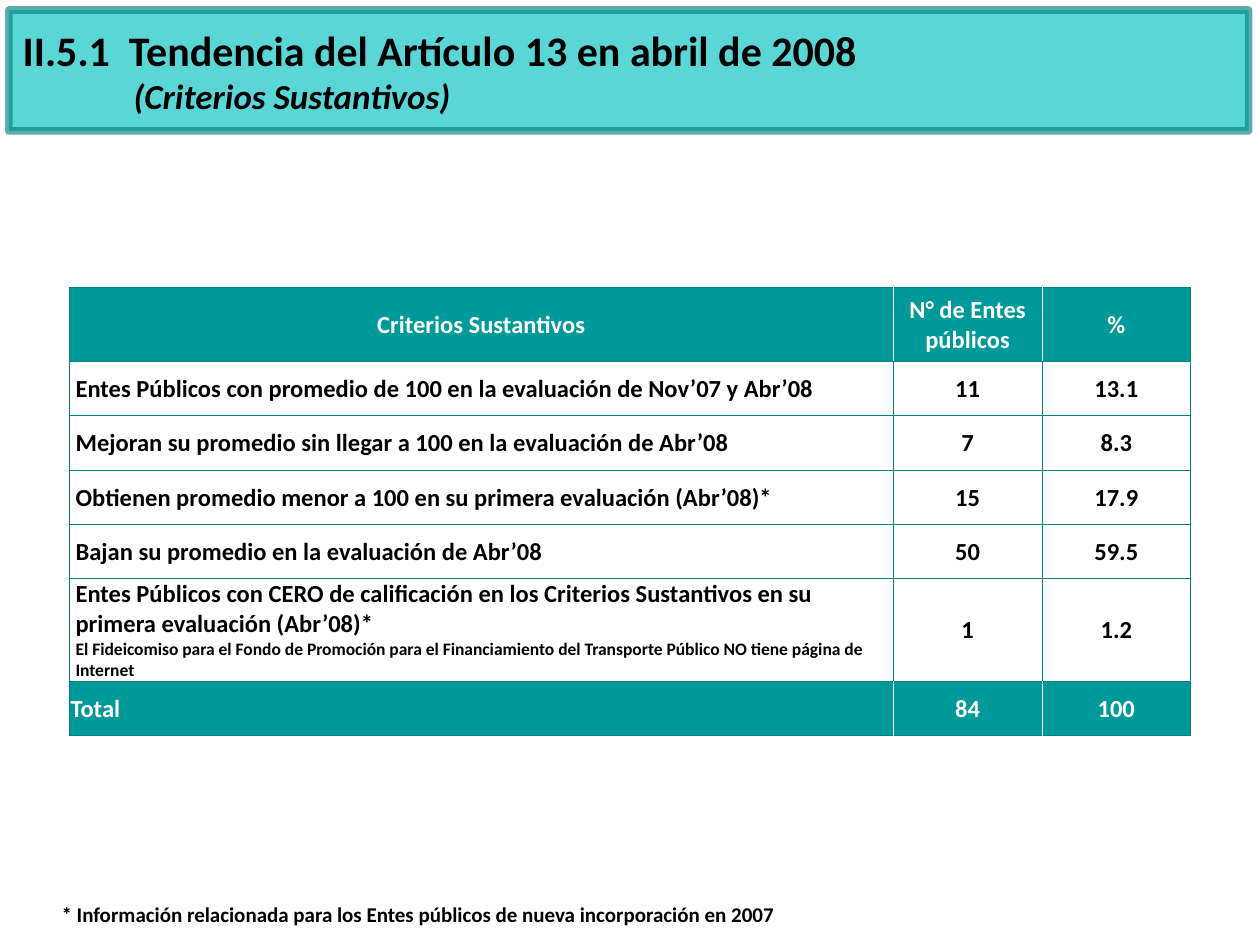
from dataclasses import dataclass

from lxml.etree import SubElement
from pptx import Presentation
from pptx.dml.color import RGBColor
from pptx.enum.shapes import MSO_SHAPE
from pptx.enum.text import MSO_ANCHOR, MSO_AUTO_SIZE, PP_ALIGN
from pptx.oxml.ns import qn
from pptx.util import Inches, Pt


@dataclass(frozen=True)
class Theme:
    """Colours, type sizes and font of the slide."""
    font: str = "Calibri"
    black: str = "000000"
    white: str = "FFFFFF"
    band: str = "33CCCC"
    border: str = "008080"
    header: str = "009999"
    title: int = 24
    subtitle: int = 20
    table: int = 14
    footnote: int = 12
    detail: int = 10


THEME = Theme()
COLUMN_WIDTHS = (6.54, 1.18, 1.18)
ROW_HEIGHTS = (0.59, 0.43, 0.43, 0.43, 0.43, 0.82, 0.43)
DETAIL = (
    "El Fideicomiso para el Fondo de Promoción para el Financiamiento del Transporte Público NO tiene página de",
    "Internet",
)
ROWS = (
    ("Criterios Sustantivos", "N° de Entes públicos", "%"),
    ("Entes Públicos con promedio de 100 en la evaluación de Nov’07 y Abr’08", "11", "13.1"),
    ("Mejoran su promedio sin llegar a 100 en la evaluación de Abr’08", "7", "8.3"),
    ("Obtienen promedio menor a 100 en su primera evaluación (Abr’08)*", "15", "17.9"),
    ("Bajan su promedio en la evaluación de Abr’08", "50", "59.5"),
    (("Entes Públicos con CERO de calificación en los Criterios Sustantivos en su",
      "primera evaluación (Abr’08)*") + DETAIL, "1", "1.2"),
    ("Total", "84", "100"),
)


def apply_format(target, values):
    """Set every attribute named in a dict of format values."""
    for name, value in values.items():
        setattr(target, name, value)


def write_paragraph(paragraph, text, size, color=THEME.black, alignment=PP_ALIGN.LEFT, italic=False):
    """Fill a paragraph with one bold run."""
    paragraph.alignment = alignment
    run = paragraph.add_run()
    run.text = text
    apply_format(run.font, {"name": THEME.font, "size": Pt(size), "bold": True, "italic": italic})
    run.font.color.rgb = RGBColor.from_string(color)


def set_opacity(fill, percent):
    """Make a solid fill partly transparent."""
    color = fill._xPr.find(qn("a:solidFill"))[0]
    SubElement(color, qn("a:alpha")).set("val", str(percent * 1000))


def add_title(slide):
    """Format the title placeholder and put the coloured band behind it."""
    title = slide.shapes.title
    apply_format(title, {"left": Inches(0.08), "top": Inches(0.09),
                         "width": Inches(9.17), "height": Inches(0.94)})
    frame = title.text_frame
    apply_format(frame, {"word_wrap": True, "auto_size": MSO_AUTO_SIZE.NONE,
                         "vertical_anchor": MSO_ANCHOR.MIDDLE})
    write_paragraph(frame.paragraphs[0], "II.5.1  Tendencia del Artículo 13 en abril de 2008", THEME.title)
    subtitle = frame.add_paragraph()
    write_paragraph(subtitle, "(Criterios Sustantivos)", THEME.subtitle, italic=True)
    subtitle._p.get_or_add_pPr().set("marL", str(Inches(0.88)))

    band = slide.shapes.add_shape(MSO_SHAPE.RECTANGLE, Inches(0.07), Inches(0.08), Inches(9.84), Inches(0.96))
    band.shadow.inherit = False
    band.fill.solid()
    band.fill.fore_color.rgb = RGBColor.from_string(THEME.band)
    set_opacity(band.fill, 80)
    band.line.width = Pt(4.33)
    band.line.color.rgb = RGBColor.from_string(THEME.border)
    set_opacity(band.line.fill, 64)
    title.element.addprevious(band.element)


def set_borders(cell, left, right):
    """Draw the four thin cell borders, with own colours at the sides."""
    properties = cell._tc.get_or_add_tcPr()
    colors = {"a:lnL": left, "a:lnR": right, "a:lnT": THEME.border, "a:lnB": THEME.border}
    for tag, color in colors.items():
        line = SubElement(properties, qn(tag), w=str(Pt(0.5)))
        fill = SubElement(line, qn("a:solidFill"))
        SubElement(fill, qn("a:srgbClr"), val=color)


def fill_cell(cell, content, row, column):
    """Write and format one table cell by its place in the grid."""
    is_body = 0 < row < len(ROWS) - 1
    last_column = len(COLUMN_WIDTHS) - 1
    inner = THEME.border if is_body else THEME.white
    set_borders(cell, inner if column > 0 else THEME.border,
                inner if column < last_column else THEME.border)
    if is_body:
        cell.fill.background()
    else:
        cell.fill.solid()
        cell.fill.fore_color.rgb = RGBColor.from_string(THEME.header)
    apply_format(cell, {"margin_left": Inches(0.05 if is_body and column == 0 else 0.01),
                        "margin_right": Inches(0.01), "margin_top": Inches(0.01),
                        "margin_bottom": 0, "vertical_anchor": MSO_ANCHOR.MIDDLE})
    lines = (content,) if isinstance(content, str) else content
    frame = cell.text_frame
    for index, text in enumerate(lines):
        paragraph = frame.add_paragraph() if index else frame.paragraphs[0]
        write_paragraph(paragraph, text, THEME.detail if text in DETAIL else THEME.table,
                        THEME.black if is_body else THEME.white,
                        PP_ALIGN.LEFT if row and column == 0 else PP_ALIGN.CENTER)


def add_criteria_table(slide):
    """Add the table of substantive criteria."""
    table = slide.shapes.add_table(len(ROWS), len(COLUMN_WIDTHS), Inches(0.55), Inches(2.28),
                                   Inches(sum(COLUMN_WIDTHS)), Inches(sum(ROW_HEIGHTS))).table
    apply_format(table, {"first_row": False, "horz_banding": False})
    for column, width in zip(table.columns, COLUMN_WIDTHS):
        column.width = Inches(width)
    for row, (height, contents) in enumerate(zip(ROW_HEIGHTS, ROWS)):
        table.rows[row].height = Inches(height)
        for column, content in enumerate(contents):
            fill_cell(table.cell(row, column), content, row, column)


def add_footnote(slide):
    """Add the note at the foot of the slide."""
    frame = slide.shapes.add_textbox(Inches(0.39), Inches(7.11), Inches(9.38), Inches(0.3)).text_frame
    apply_format(frame, {"word_wrap": True, "auto_size": MSO_AUTO_SIZE.SHAPE_TO_FIT_TEXT})
    write_paragraph(frame.paragraphs[0],
                    "* Información relacionada para los Entes públicos de nueva incorporación en 2007",
                    THEME.footnote)


def main():
    """Build the slide and save it."""
    presentation = Presentation()
    apply_format(presentation, {"slide_width": Inches(10), "slide_height": Inches(7.5)})
    slide = presentation.slides.add_slide(presentation.slide_layouts[5])
    add_title(slide)
    add_criteria_table(slide)
    add_footnote(slide)
    presentation.save("out.pptx")


if __name__ == "__main__":
    main()
